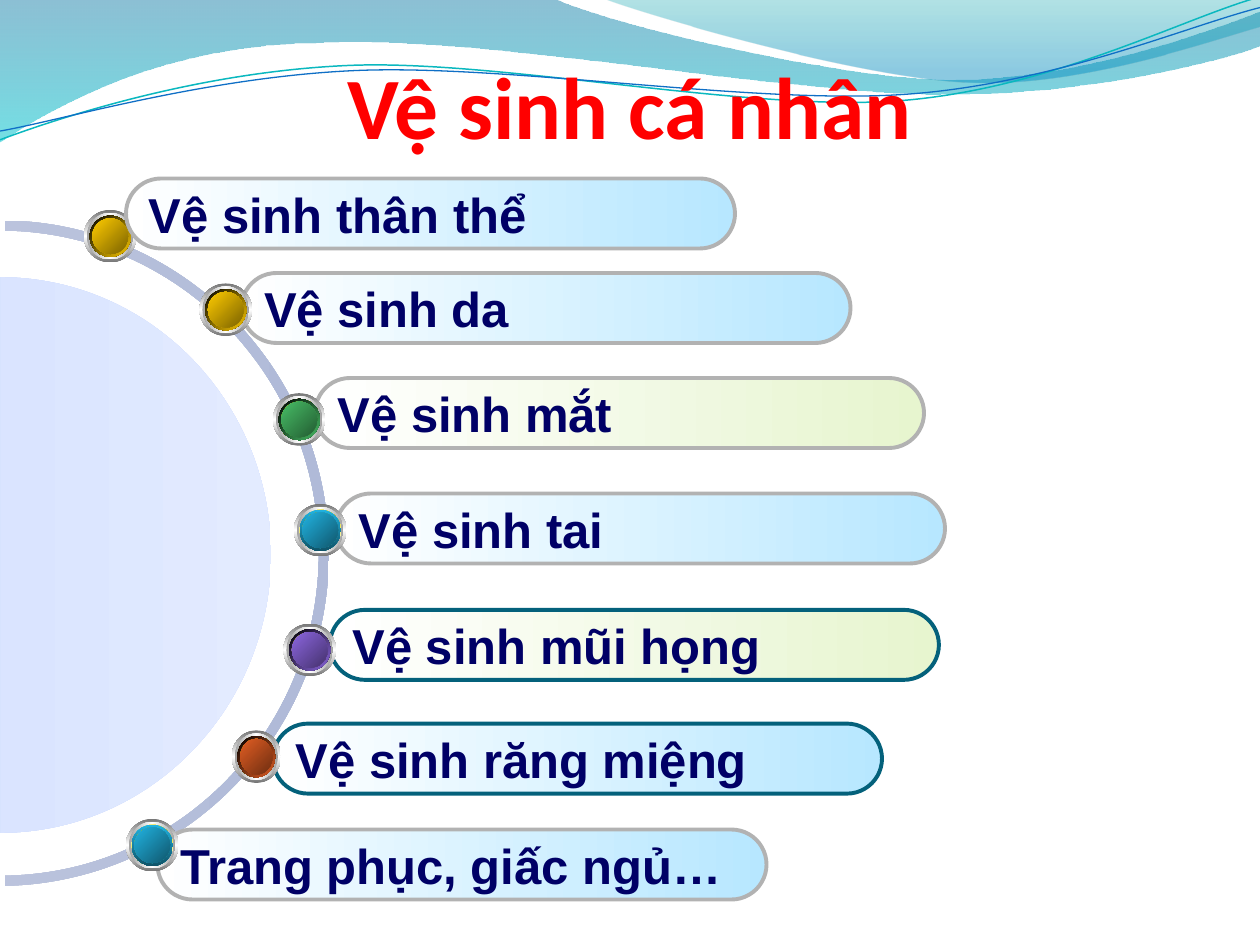
from math import cos, radians, sin

from lxml.etree import SubElement
from pptx import Presentation
from pptx.dml.color import RGBColor
from pptx.enum.shapes import MSO_SHAPE
from pptx.enum.text import MSO_ANCHOR, MSO_AUTO_SIZE, PP_ALIGN
from pptx.oxml.ns import qn
from pptx.util import Pt

COLORS = {
    "title": "FF0000", "text": "000066", "white": "FFFFFF", "black": "000000",
    "sky": "B7E7FF", "lime": "E7F5CF", "gray": "B2B2B2", "teal": "04617B",
    "steel": "767676", "silver": "A2A2A2", "gold": "E2D700", "olive": "ADA500",
    "wave_blue": "0074A1", "wave_aqua": "00C6CF", "crest_aqua": "00A1A9", "crest_blue": "008BBF",
    "line_aqua": "0AB8BF", "line_blue": "0F6FC6",
    "arc_light": "C6CDE2", "arc_dark": "B0BAD8", "disc_dark": "CEDCFE", "disc_light": "E3EBFF",
    "yellow": "FFCC00", "yellow_dark": "7C6300", "green": "48BE67", "green_dark": "235C32",
    "blue": "21B3E1", "blue_dark": "10576D", "blue_rim": "0F5368",
    "purple": "8D67E1", "purple_dark": "45326D", "orange": "E35E23", "orange_dark": "6E2E11",
}

WAVE = [[(0, -0.7)], [(316.8, -0.7)],
        [(342.7, 12.2), (478.1, 45.4), (545.8, 45.4)],
        [(614.2, 45.4), (689.8, 18.7), (720, 6.5)], [(720.7, 25.9)],
        [(707.8, 31.7), (626.4, 54.7), (537.1, 54)],
        [(447.8, 54), (275, 20.2), (185, 24.5)],
        [(92.9, 25.2), (33.1, 59.8), (-0.7, 81.4)]]
CREST = [[(344.9, -0.7)], [(366.5, 7.9), (491, 44.6), (553.7, 46.8)],
         [(616.3, 49.7), (691.9, 23), (720, 15.1)], [(720, 0)]]
AQUA_LINE = [[(0, 79.9)], [(34.6, 67), (113.8, 41), (199.4, 37.4)],
             [(284.4, 33.8), (427, 64.1), (513.4, 57.6)],
             [(599.8, 51.1), (675.4, 10.8), (718.6, -1.4)]]
BLUE_LINE = [[(0, 74.9)], [(33.8, 69.1), (118.1, 43.9), (203.8, 40.3)],
             [(290.2, 36.7), (429.8, 59.8), (516.2, 54)],
             [(601.9, 48.2), (677.5, 15.1), (720, 4.3)]]
ARC = [[(2.9, 131.8)], [(102.2, 133.2), (182.2, 215.3), (182.2, 316.1)],
       [(182.2, 416.9), (102.2, 499), (2.9, 500.4)], [(2.9, 506.2)],
       [(105.1, 504), (187.9, 419.8), (187.9, 316.1)],
       [(187.9, 212.4), (105.1, 127.4), (2.9, 126)]]
DISC = [[(0, 158.4)], [(85.7, 158.4), (154.8, 229.7), (154.8, 316.8)],
        [(154.8, 404.6), (85.7, 475.9), (0, 475.9)]]

ITEMS = [
    ("Vệ sinh thân thể", (72, 102), (48, 120), "yellow", "sky", "gray"),
    ("Vệ sinh da", (138, 156), (114, 162), "yellow", "sky", "gray"),
    ("Vệ sinh mắt", (180, 216), (156, 224.7), "green", "lime", "gray"),
    ("Vệ sinh tai", (192, 282), (168, 288), "blue", "sky", "gray"),
    ("Vệ sinh mũi họng", (188.5, 348.5), (162, 356.4), "purple", "lime", "teal"),
    ("Vệ sinh răng miệng", (156, 413.5), (132.5, 417.4), "orange", "sky", "teal"),
    ("Trang phục, giấc ngủ…", (90, 474), (72, 468), "blue", "sky", "gray"),
]


def rgb(name):
    return RGBColor.from_string(COLORS[name])


def set_gradient(sp, stops, angle=0):
    sp.fill.background()
    old = sp._element.spPr.find(qn("a:noFill"))
    grad = SubElement(sp._element.spPr, qn("a:gradFill"), rotWithShape="1")
    old.getparent().replace(old, grad)
    stop_list = SubElement(grad, qn("a:gsLst"))
    for pos, name, *alpha in stops:
        stop = SubElement(stop_list, qn("a:gs"), pos=str(pos * 1000))
        color = SubElement(stop, qn("a:srgbClr"), val=COLORS[name])
        if alpha:
            SubElement(color, qn("a:alpha"), val=str(alpha[0] * 1000))
    SubElement(grad, qn("a:lin"), ang=str(angle * 60000), scaled="0")


def set_line(sp, name=None, width=0):
    sp.shadow.inherit = False
    if name:
        sp.line.color.rgb = rgb(name)
        sp.line.width = Pt(width)
    else:
        sp.line.fill.background()


def format_text(tf, text, *, font, size, color, align, anchor):
    tf.text = text
    tf.vertical_anchor = anchor
    p = tf.paragraphs[0]
    p.alignment = align
    r = p.runs[0]
    r.font.name, r.font.size, r.font.bold = font, Pt(size), True
    r.font.color.rgb = rgb(color)


def add_curve(s, x, y, w, h, outline, rotation=0, close=True):
    builder = s.shapes.build_freeform(0, 0)
    builder.add_line_segments([(Pt(w), 0), (Pt(w), Pt(h)), (0, Pt(h))])
    sp = builder.convert_to_shape(Pt(x), Pt(y))
    sp.rotation = rotation
    geom = next(sp._element.iter(qn("a:path")))
    for child in list(geom):
        geom.remove(child)
    c, n = cos(radians(rotation)), sin(radians(rotation))
    for i, points in enumerate(outline):
        tag = "a:moveTo" if i == 0 else "a:lnTo" if len(points) == 1 else "a:cubicBezTo"
        segment = SubElement(geom, qn(tag))
        for px, py in points:
            dx, dy = px - x - w / 2, py - y - h / 2
            SubElement(segment, qn("a:pt"), x=str(Pt(w / 2 + dx * c + dy * n)),
                       y=str(Pt(h / 2 - dx * n + dy * c)))
    if close:
        SubElement(geom, qn("a:close"))
    return sp


def add_waves(s):
    for box, outline, stops in (
        ((-0.7, -0.7, 721.4, 82.1), WAVE, [(0, "wave_blue", 45), (100, "wave_aqua", 55)]),
        ((344.9, -0.7, 375.1, 50.4), CREST, [(0, "crest_aqua", 30), (80, "crest_blue", 45)]),
    ):
        sp = add_curve(s, *box, outline)
        set_gradient(sp, stops, 90)
        set_line(sp)
    for box, outline, name, width in (
        ((-1.4, 15.8, 721.4, 51.1), AQUA_LINE, "line_aqua", 0.85),
        ((-1.4, 21.6, 722.2, 41.8), BLUE_LINE, "line_blue", 0.75),
    ):
        sp = add_curve(s, *box, outline, rotation=357.3, close=False)
        sp.fill.background()
        set_line(sp, name, width)


def add_dial(s):
    for box, outline, start, end in (
        ((-190, 128.2, 380, 375.8), ARC, "arc_light", "arc_dark"),
        ((-158.4, 162.7, 317.5, 309.6), DISC, "disc_dark", "disc_light"),
    ):
        sp = add_curve(s, *box, outline, rotation=90)
        set_gradient(sp, [(0, start), (100, end)], 270)
        set_line(sp)


def add_bead(s, x, y, w, h, color):
    group = s.shapes.add_group_shape()
    rim = ("blue", "blue_rim", 90) if color == "blue" else ("black", color, 45)
    layers = [
        (0, ("steel", "white", "steel"), 90),
        (1.7, ("silver", "white", "silver"), 0),
        (3.2, ("white", "gold", "white"), 45),
        (3.2, rim[:2], rim[2]),
        (4.8, ("olive", "gold", "olive"), 315),
        (4.8, (color, color + "_dark"), 45),
    ]
    for inset, names, angle in layers:
        sp = group.shapes.add_shape(MSO_SHAPE.OVAL, Pt(x + inset), Pt(y + inset),
                                    Pt(w - 2 * inset), Pt(h - 2 * inset))
        step = 100 // (len(names) - 1)
        set_gradient(sp, [(i * step, name) for i, name in enumerate(names)], angle)
        set_line(sp)


def add_bar(s, x, y, w, h, text, tint, border):
    sp = s.shapes.add_shape(MSO_SHAPE.ROUNDED_RECTANGLE, Pt(x), Pt(y), Pt(w), Pt(h))
    sp.adjustments[0] = 0.5
    set_gradient(sp, [(0, "white"), (100, tint)])
    set_line(sp, border, 2.25)
    sp.text_frame.word_wrap = False
    format_text(sp.text_frame, text, font="Arial", size=28, color="text",
                align=PP_ALIGN.LEFT, anchor=MSO_ANCHOR.MIDDLE)


def add_items(s, x, y):
    for i, (text, (bx, by), (cx, cy), color, tint, border) in enumerate(ITEMS):
        bar = (add_bar, (x + bx, y + by, 348, 40, text, tint, border))
        bead = (add_bead, (x + cx, y + cy, 28 if color == "orange" else 30, 30, color))
        for draw, args in ((bead, bar) if i == 0 else (bar, bead)):
            draw(s, *args)


def place_title(s, x, y, w, h, text):
    sp = s.shapes.title
    s.shapes._spTree.append(sp._element)
    sp.left, sp.top, sp.width, sp.height = Pt(x), Pt(y), Pt(w), Pt(h)
    tf = sp.text_frame
    tf.auto_size = MSO_AUTO_SIZE.NONE
    tf.margin_left = tf.margin_right = tf.margin_bottom = 0
    format_text(tf, text, font="Calibri", size=50, color="title",
                align=PP_ALIGN.CENTER, anchor=MSO_ANCHOR.BOTTOM)


def main():
    prs = Presentation()
    prs.slide_width, prs.slide_height = Pt(720), Pt(540)
    s = prs.slides.add_slide(prs.slide_layouts[5])
    add_waves(s)
    add_dial(s)
    add_items(s, 0, 0)
    place_title(s, 36, 0, 648, 90, "Vệ sinh cá nhân")
    prs.save("out.pptx")


if __name__ == "__main__":
    main()
